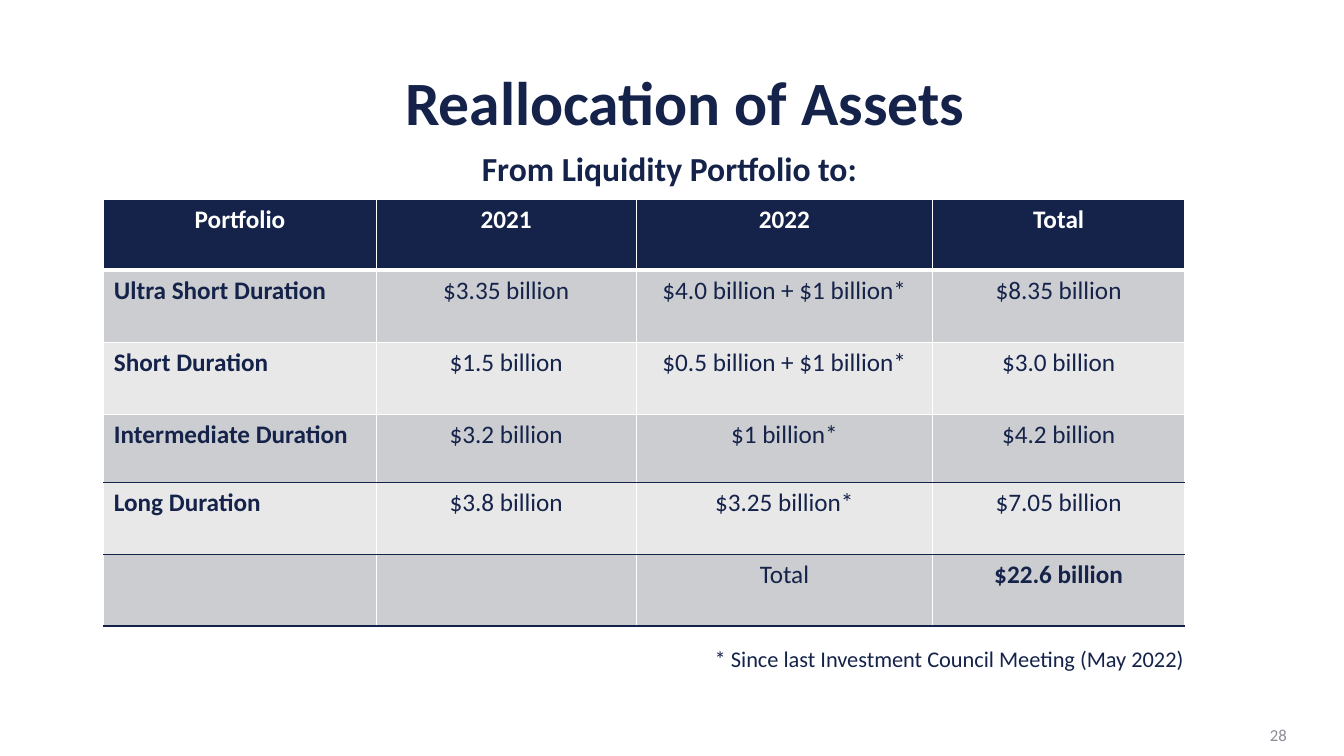
from dataclasses import dataclass
from lxml.etree import SubElement
from pptx import Presentation
from pptx.dml.color import RGBColor
from pptx.enum.text import MSO_ANCHOR, PP_ALIGN
from pptx.oxml.ns import qn
from pptx.util import Inches, Pt


@dataclass(frozen=True)
class Theme:
    font: str = "Calibri"
    navy: str = "15234A"
    white: str = "FFFFFF"
    dark: str = "CCCDD0"
    light: str = "E8E8E9"
    gray: str = "8C8D96"
    title: int = 44
    head: int = 24
    body: int = 18
    note: int = 16
    page: int = 12


LOOK = Theme()
WIDE, HIGH = Inches(13.33), Inches(7.5)
COLS = (20.26, 19.35, 22.06, 18.75)
ROWS = (9.33, 9.6, 9.47, 9.07, 9.47, 9.47)
DATA = (
    ("Portfolio", "2021", "2022", "Total"),
    ("Ultra Short Duration", "$3.35 billion", "$4.0 billion + $1 billion*", "$8.35 billion"),
    ("Short Duration", "$1.5 billion", "$0.5 billion + $1 billion*", "$3.0 billion"),
    ("Intermediate Duration", "$3.2 billion", "$1 billion*", "$4.2 billion"),
    ("Long Duration", "$3.8 billion", "$3.25 billion*", "$7.05 billion"),
    ("", "", "Total", "$22.6 billion"),
)
RULES = (
    (LOOK.white, 1), (LOOK.white, 3), (LOOK.white, 1), (LOOK.white, 1),
    (LOOK.navy, 1), (LOOK.navy, 1), (LOOK.navy, 1),
)


def across(share):
    return round(WIDE * share / 100)


def down(share):
    return round(HIGH * share / 100)


def place(left, top, wide, high):
    return across(left), down(top), across(wide), down(high)


def write(frame, text, size, color, bold=False, align=PP_ALIGN.LEFT):
    para = frame.paragraphs[0]
    para.alignment = align
    para.font.size = Pt(size)
    if text:
        run = para.add_run()
        run.text = text
        run.font.name = LOOK.font
        run.font.size = Pt(size)
        run.font.bold = bold
        run.font.color.rgb = RGBColor.from_string(color)
    return para


def label(slide, area, text, size, color, bold=False, align=PP_ALIGN.LEFT,
          anchor=MSO_ANCHOR.TOP, wrap=True):
    frame = slide.shapes.add_textbox(*place(*area)).text_frame
    frame.word_wrap = wrap
    frame.vertical_anchor = anchor
    return write(frame, text, size, color, bold, align)


def edge(cell, side, color, width):
    line = SubElement(cell._tc.get_or_add_tcPr(), qn("a:ln" + side), w=str(Pt(width)))
    fill = SubElement(line, qn("a:solidFill"))
    SubElement(fill, qn("a:srgbClr"), val=color)


def style(cell, row, col):
    sides = (("L", RULES[0]), ("R", RULES[0]), ("T", RULES[row]), ("B", RULES[row + 1]))
    for side, rule in sides:
        edge(cell, side, *rule)
    shade = LOOK.navy if row == 0 else LOOK.dark if row % 2 else LOOK.light
    cell.fill.solid()
    cell.fill.fore_color.rgb = RGBColor.from_string(shade)
    final = (row, col) == (len(ROWS) - 1, len(COLS) - 1)
    write(cell.text_frame, DATA[row][col], LOOK.body,
          LOOK.navy if row else LOOK.white,
          row == 0 or col == 0 or final,
          PP_ALIGN.CENTER if row == 0 or col else PP_ALIGN.LEFT)


def grid(slide):
    area = place(7.73, 26.4, sum(COLS), sum(ROWS))
    table = slide.shapes.add_table(len(ROWS), len(COLS), *area).table
    for col, share in enumerate(COLS):
        table.columns[col].width = across(share)
    for row, share in enumerate(ROWS):
        table.rows[row].height = down(share)
        for col in range(len(COLS)):
            style(table.cell(row, col), row, col)


def main():
    deck = Presentation()
    deck.slide_width, deck.slide_height = WIDE, HIGH
    slide = deck.slides.add_slide(deck.slide_layouts[6])
    title = label(slide, (10.95, 8.93, 80.05, 10), "Reallocation of Assets", LOOK.title,
                  LOOK.navy, True, PP_ALIGN.CENTER, MSO_ANCHOR.MIDDLE)
    title.line_spacing = 0.9
    label(slide, (73.97, 94.53, 22.51, 5.33), "28", LOOK.page, LOOK.gray,
          align=PP_ALIGN.RIGHT, anchor=MSO_ANCHOR.MIDDLE)
    grid(slide)
    label(slide, (35.11, 18.93, 29.78, 6.67), "From Liquidity Portfolio to:",
          LOOK.head, LOOK.navy, True, wrap=False)
    label(slide, (52.44, 84.67, 40.66, 4.93),
          "* Since last Investment Council Meeting (May 2022)", LOOK.note, LOOK.navy)
    deck.save("out.pptx")


if __name__ == "__main__":
    main()
